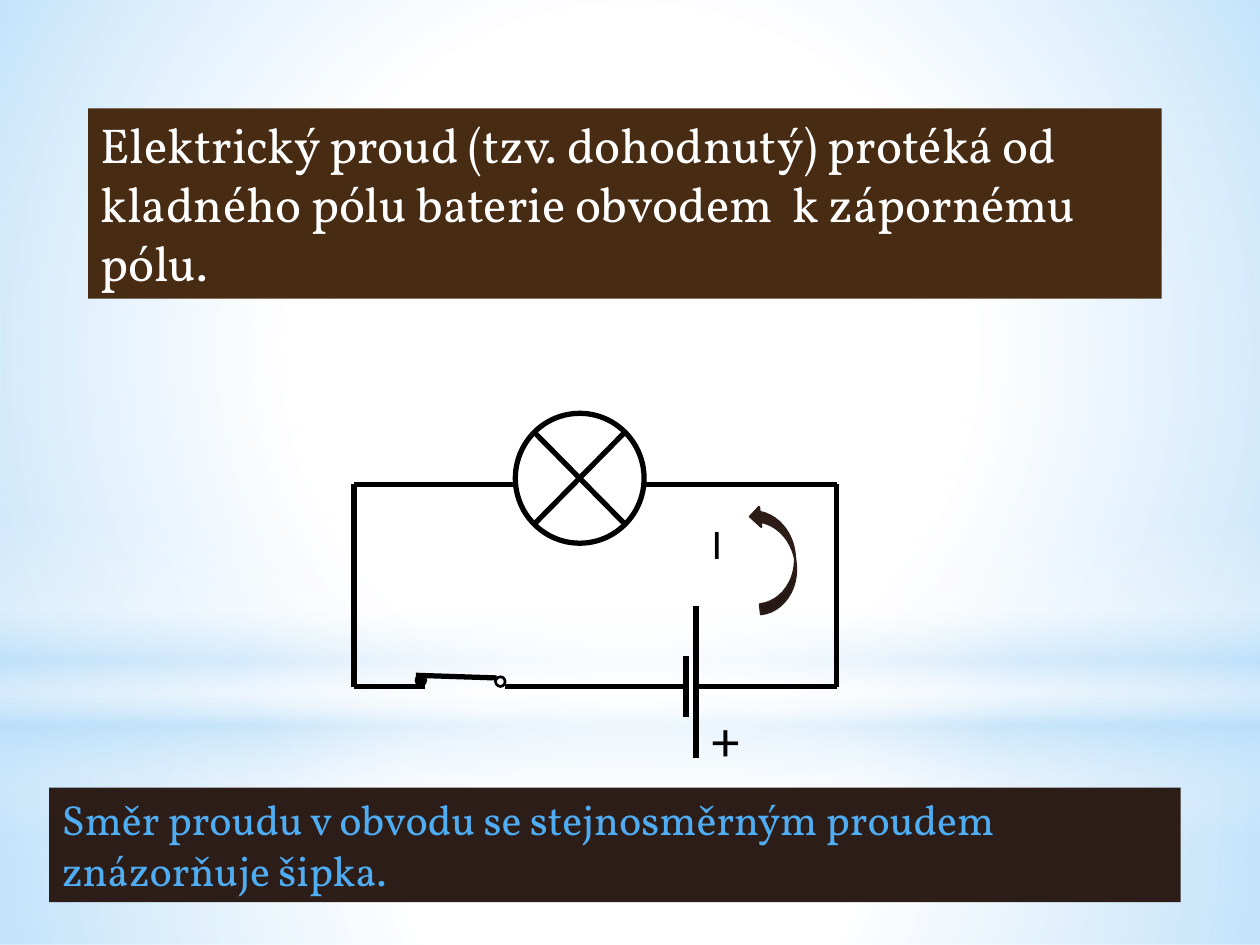
from typing import NamedTuple, Optional

from lxml import etree
from pptx import Presentation
from pptx import util as u
from pptx.dml import color
from pptx.enum import shapes, text
from pptx.oxml import ns

BLACK, WHITE, SKY = "000000", "FFFFFF", "B4DCFA"
DARK, BROWN, BLUE = "2D1D19", "472B13", "4FADF3"
KIND = shapes.MSO_SHAPE

# Circuit geometry
LEFT, RIGHT, TOP, BOTTOM = 202.3, 478.1, 276.8, 392.4
LONG_X, SHORT_X = 397.8, 392.2
LAMP_LEFT, LAMP_RIGHT = 294.5, 368.6
CROSS_LEFT, CROSS_RIGHT, CROSS_TOP, CROSS_BOTTOM = 305.3, 357.1, 247, 299.5
WIRE, PLATE, THIN = 3, 3.5, 1.25


class Area(NamedTuple):
    left: float
    top: float
    width: float
    height: float


class Stop(NamedTuple):
    position: int
    colour: str
    opacity: int


class Glow(NamedTuple):
    kind: shapes.MSO_SHAPE
    area: Area
    stops: list[Stop]
    radial: bool = True


class Line(NamedTuple):
    x1: float
    y1: float
    x2: float
    y2: float
    weight: float = WIRE


class Symbol(NamedTuple):
    kind: shapes.MSO_SHAPE
    area: Area
    weight: float
    fill: Optional[str] = None
    line: str = BLACK


class Label(NamedTuple):
    area: Area
    words: str
    font: str
    size: float
    colour: str
    fill: Optional[str] = None


GLOWS = [
    Glow(KIND.RECTANGLE, Area(0, 402, 720, 138),
         [Stop(0, WHITE, 91), Stop(37, WHITE, 76), Stop(100, SKY, 79)]),
    Glow(KIND.RECTANGLE, Area(0, 0, 720, 402),
         [Stop(0, WHITE, 89), Stop(48, WHITE, 62), Stop(100, SKY, 79)]),
    Glow(KIND.RECTANGLE, Area(0, 296.6, 720, 180),
         [Stop(0, WHITE, 0), Stop(29, WHITE, 30), Stop(45, SKY, 40),
          Stop(55, WHITE, 26), Stop(65, SKY, 60), Stop(100, WHITE, 0)], False),
    Glow(KIND.OVAL, Area(0, 126, 720, 402),
         [Stop(0, WHITE, 100), Stop(56, WHITE, 0)]),
]

LINES = [
    Line(237.6, 385.9, 283.7, 387.4),                             # switch lever
    Line(LONG_X, BOTTOM, RIGHT, BOTTOM),
    Line(242.6, BOTTOM, LEFT, BOTTOM),
    Line(LONG_X, 433.4, LONG_X, 346.3, PLATE),                    # battery
    Line(SHORT_X, 409.7, SHORT_X, 375.1, PLATE),
    Line(SHORT_X, BOTTOM, 288.7, BOTTOM),
    Line(CROSS_RIGHT, CROSS_TOP, CROSS_LEFT, CROSS_BOTTOM),       # lamp cross
    Line(CROSS_LEFT, CROSS_TOP, CROSS_RIGHT, CROSS_BOTTOM),
    Line(LAMP_RIGHT, TOP, RIGHT, TOP),
    Line(LEFT, TOP, LAMP_LEFT, TOP),
    Line(LEFT, BOTTOM, LEFT, TOP),
    Line(RIGHT, BOTTOM, RIGHT, TOP),
]

CONTACT = Symbol(KIND.DONUT, Area(283, 386.6, 5.8, 5.8), THIN)
LAMP = Symbol(KIND.OVAL, Area(LAMP_LEFT, 236.2, 73.6, 74.2), WIRE)
PIVOT = Symbol(KIND.OVAL, Area(237.6, 385.9, 5.8, 5.8), THIN, BLACK)
CURRENT = Symbol(KIND.CURVED_LEFT_ARROW, Area(431.3, 288, 23, 61.9), THIN, DARK, DARK)

LABELS = [
    Label(Area(50.4, 61.9, 613.4, 108.7),
          "Elektrický proud (tzv. dohodnutý) protéká od kladného pólu baterie "
          "obvodem  k zápornému pólu.", "Vollkorn", 28, WHITE, BROWN),
    Label(Area(399.6, 399.6, 33.8, 46.1), "+", "Calibri", 32, BLACK),
    Label(Area(28.1, 450, 646.6, 65.5),
          "Směr proudu v obvodu se stejnosměrným proudem znázorňuje šipka.",
          "Vollkorn", 24, BLUE, DARK),
    Label(Area(399.6, 292.3, 22.3, 36.7), "I", "Calibri", 24, BLACK),
]


def paint(target, colour: Optional[str]) -> None:
    """Give a fill one solid colour, or none."""
    if colour is None:
        target.background()
    else:
        target.solid()
        target.fore_color.rgb = color.RGBColor.from_string(colour)


def place(area: Area) -> list[u.Length]:
    return [u.Pt(value) for value in area]


def add_symbol(page, symbol: Symbol):
    shape = page.shapes.add_shape(symbol.kind, *place(symbol.area))
    shape.shadow.inherit = False
    paint(shape.fill, symbol.fill)
    paint(shape.line.fill, symbol.line)
    shape.line.width = u.Pt(symbol.weight)
    return shape


def add_glow(page, glow: Glow) -> None:
    shape = page.shapes.add_shape(glow.kind, *place(glow.area))
    shape.shadow.inherit = False
    shape.line.fill.background()
    stops = "".join(
        f'<a:gs pos="{s.position * 1000}"><a:srgbClr val="{s.colour}">'
        f'<a:alpha val="{s.opacity * 1000}"/></a:srgbClr></a:gs>'
        for s in glow.stops)
    course = ('<a:path path="circle"><a:fillToRect l="50000" t="50000" r="50000" '
              'b="50000"/></a:path>' if glow.radial
              else '<a:lin ang="5400000" scaled="0"/>')
    gradient = etree.fromstring(
        f'<a:gradFill {ns.nsdecls("a")} rotWithShape="1">'
        f'<a:gsLst>{stops}</a:gsLst>{course}</a:gradFill>')
    shape.element.spPr.find(ns.qn("a:prstGeom")).addnext(gradient)


def add_line(page, line: Line) -> None:
    ends = [u.Pt(value) for value in line[:4]]
    connector = page.shapes.add_connector(shapes.MSO_CONNECTOR.STRAIGHT, *ends)
    paint(connector.line.fill, BLACK)
    connector.line.width = u.Pt(line.weight)
    etree.SubElement(connector.element.spPr, ns.qn("a:effectLst"))


def add_label(page, label: Label) -> None:
    box = page.shapes.add_textbox(*place(label.area))
    paint(box.fill, label.fill)
    frame = box.text_frame
    frame.word_wrap = True
    frame.auto_size = text.MSO_AUTO_SIZE.SHAPE_TO_FIT_TEXT
    para = frame.paragraphs[0]
    span = para.add_run()
    span.text = label.words
    span.font.name = label.font
    span.font.size = u.Pt(label.size)
    paint(span.font.fill, label.colour)


def main() -> None:
    deck = Presentation()
    deck.slide_width, deck.slide_height = u.Pt(720), u.Pt(540)
    page = deck.slides.add_slide(deck.slide_layouts[6])
    paint(page.background.fill, WHITE)

    # Soft background
    for glow in GLOWS:
        add_glow(page, glow)

    # Circuit
    contact = add_symbol(page, CONTACT)
    contact.adjustments[0] = 0.055
    add_symbol(page, LAMP)
    for line in LINES:
        add_line(page, line)
    add_symbol(page, PIVOT)

    # Direction of the current
    arrow = add_symbol(page, CURRENT)
    arrow.rotation = 173.6
    arrow.element.spPr.xfrm.set("flipH", "1")

    # Statements and labels
    for label in LABELS:
        add_label(page, label)

    deck.save("out.pptx")


if __name__ == "__main__":
    main()
